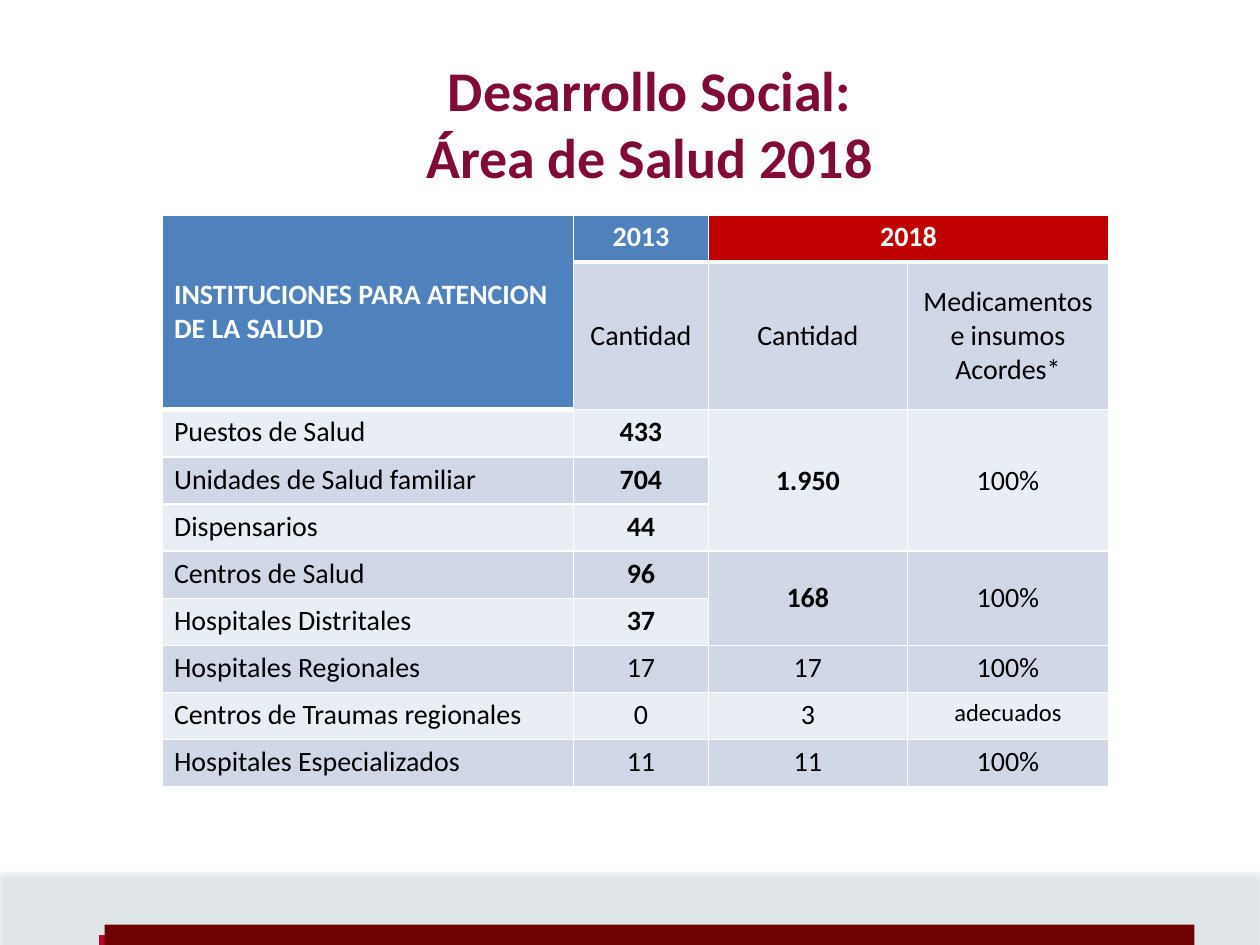
from collections import namedtuple
from dataclasses import dataclass

from lxml.etree import SubElement
from pptx import Presentation
from pptx.dml.color import RGBColor
from pptx.enum.shapes import MSO_SHAPE as Shape
from pptx.enum.text import MSO_ANCHOR as Anchor, PP_ALIGN as Align
from pptx.oxml.ns import qn
from pptx.util import Cm, Pt

Box = namedtuple("Box", "left top width height")


@dataclass(frozen=True)
class Theme:
    """Colours, font and type sizes of the slide."""
    font: str = "Calibri"
    title: str = "800B37"
    blue: str = "4F81BD"
    red: str = "C00000"
    bands: tuple = ("E9EDF4", "D0D8E8")
    white: str = "FFFFFF"
    black: str = "000000"
    mist: str = "DBEEF4"
    crimson: str = "B60527"
    maroon: str = "6E0101"
    title_size: int = 32
    body_size: int = 16
    small_size: int = 14


THEME = Theme()
COLUMNS = (8.28, 2.72, 4.01, 4.06)
ROWS = (0.95, 2.98) + (0.95,) * 8
CONTENT = (
    ("INSTITUCIONES PARA ATENCION DE LA SALUD", "2013", "2018", None),
    (None, "Cantidad", "Cantidad", "Medicamentos e insumos\nAcordes*"),
    ("Puestos de Salud", "433", "1.950", "100%"),
    ("Unidades de Salud familiar", "704", None, None),
    ("Dispensarios", "44", None, None),
    ("Centros de Salud", "96", "168", "100%"),
    ("Hospitales Distritales", "37", None, None),
    ("Hospitales Regionales", "17", "17", "100%"),
    ("Centros de Traumas regionales", "0", "3", "adecuados"),
    ("Hospitales Especializados", "11", "11", "100%"),
)
MERGES = {(0, 0): (1, 0), (0, 2): (0, 3), (2, 2): (4, 2),
          (2, 3): (4, 3), (5, 2): (6, 2), (5, 3): (6, 3)}


def write(frame, text, size, color, bold, align):
    """Fill a text frame and format all of its runs."""
    frame.text = text
    for para in frame.paragraphs:
        para.alignment = align
        for span in para.runs:
            font = span.font
            font.name, font.size, font.bold = THEME.font, Pt(size), bold
            font.color.rgb = RGBColor.from_string(color)


def add_bar(page, box, color):
    """Add a plain filled rectangle."""
    bar = page.shapes.add_shape(Shape.RECTANGLE, *map(Cm, box))
    bar.shadow.inherit = False
    bar.fill.solid()
    bar.fill.fore_color.rgb = RGBColor.from_string(color)
    bar.line.fill.background()
    return bar


def add_footer(page, box):
    """Add the translucent band and the two bars at the slide foot."""
    band = add_bar(page, box, THEME.mist)
    properties = band.fill._xPr
    tint = properties.find(qn("a:solidFill"))[0]
    SubElement(tint, qn("a:alpha"), val="32000")
    shadow = SubElement(properties.find(qn("a:effectLst")), qn("a:outerShdw"),
                        blurRad=str(Pt(3.1)), dist=str(Pt(1.8)),
                        dir="5400000", rotWithShape="0")
    shade = SubElement(shadow, qn("a:srgbClr"), val=THEME.black)
    SubElement(shade, qn("a:alpha"), val="35000")
    bottom = box.top + box.height
    add_bar(page, Box(box.left + 2, bottom - 0.2, 21.42, 0.2), THEME.crimson)
    add_bar(page, Box(box.left + 2.11, bottom - 0.41, 21.97, 0.41), THEME.maroon)


def add_title(page, box):
    """Add the two-line centred title."""
    frame = page.shapes.add_textbox(*map(Cm, box)).text_frame
    frame.word_wrap = True
    write(frame, "Desarrollo Social:\nÁrea de Salud 2018",
          THEME.title_size, THEME.title, True, Align.CENTER)


def add_borders(cell, top, bottom):
    """Draw white cell edges with the given top and bottom widths."""
    properties = cell._tc.get_or_add_tcPr()
    for tag, width in (("lnL", 1), ("lnR", 1), ("lnT", top), ("lnB", bottom)):
        edge = SubElement(properties, qn(f"a:{tag}"), w=str(Pt(width)))
        fill = SubElement(edge, qn("a:solidFill"))
        SubElement(fill, qn("a:srgbClr"), val=THEME.white)


def style_cell(cell, row, column):
    """Set borders, fill, margins and text of one table cell."""
    heading = row == 0 or (row, column) == (1, 0)
    above = row == 1 or (row, column) == (2, 0)
    add_borders(cell, 3 if above else 1, 3 if heading else 1)
    color = THEME.bands[row % 2]
    if heading:
        color = THEME.red if column > 1 else THEME.blue
    cell.fill.solid()
    cell.fill.fore_color.rgb = RGBColor.from_string(color)
    cell.margin_left = cell.margin_right = Cm(0.23)
    cell.margin_top = cell.margin_bottom = Cm(0.11)
    text = CONTENT[row][column]
    if text is None:
        return
    tall = row == 1 or MERGES.get((row, column), (row, 0))[0] > row
    cell.vertical_anchor = Anchor.MIDDLE if tall else Anchor.TOP
    bold = heading or (2 <= row <= 6 and column in (1, 2))
    write(cell.text_frame, text,
          THEME.small_size if text == "adecuados" else THEME.body_size,
          THEME.white if heading else THEME.black, bold,
          Align.CENTER if column else Align.LEFT)


def add_health_table(page, box):
    """Add the table of health institutions."""
    table = page.shapes.add_table(len(ROWS), len(COLUMNS), *map(Cm, box)).table
    table.first_row = table.horz_banding = False
    for column, width in zip(table.columns, COLUMNS):
        column.width = Cm(width)
    for row, height in zip(table.rows, ROWS):
        row.height = Cm(height)
    for start, end in MERGES.items():
        table.cell(*start).merge(table.cell(*end))
    for row in range(len(ROWS)):
        for column in range(len(COLUMNS)):
            style_cell(table.cell(row, column), row, column)


def main():
    """Build and save the slide."""
    deck = Presentation()
    deck.slide_width, deck.slide_height = Cm(25.4), Cm(19.05)
    page = deck.slides.add_slide(deck.slide_layouts[6])
    add_footer(page, Box(0, 17.58, 25.4, 1.47))
    add_title(page, Box(1.6, 1, 23, 3))
    add_health_table(page, Box(3.28, 4.33, sum(COLUMNS), sum(ROWS)))
    deck.save("out.pptx")


if __name__ == "__main__":
    main()
